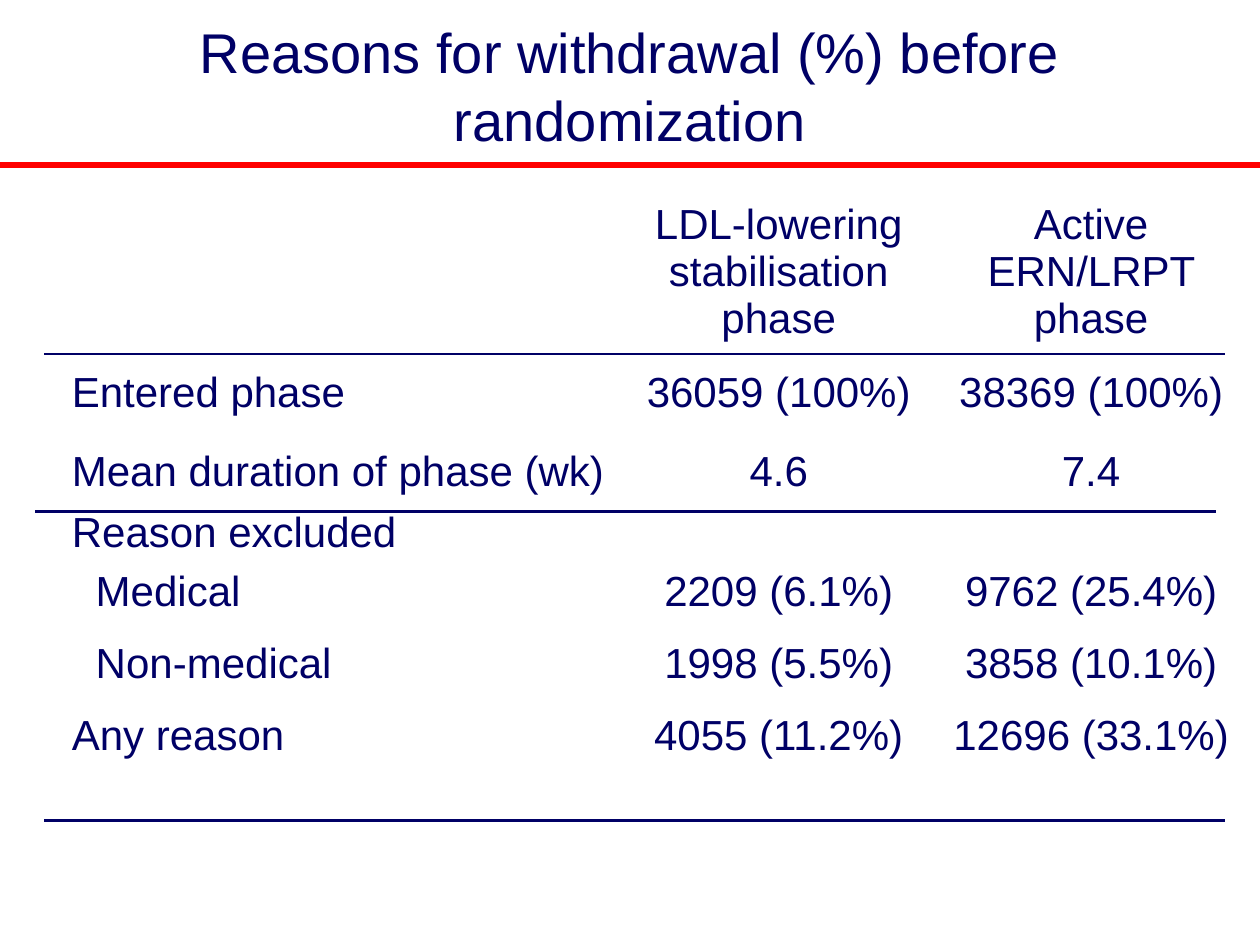
"""Build the slide on reasons for withdrawal before randomization."""
from dataclasses import dataclass

import pptx
import pptx.dml.color
import pptx.enum.shapes
import pptx.enum.text
import pptx.oxml.ns
import pptx.util
from lxml import etree
from pptx.util import Inches

NAVY = "000066"
RED = "FF0000"
ALIGN = pptx.enum.text.PP_ALIGN
ANCHOR = pptx.enum.text.MSO_ANCHOR


@dataclass
class Row:
    label: str
    stabilisation: str
    active: str
    height: float
    indent: float = 0


@dataclass
class Rule:
    left: float
    top: float
    length: float
    color: str = NAVY
    weight: float = 1.5


ROWS = [
    Row("", "LDL-lowering stabilisation phase", "Active ERN/LRPT phase", 1.33),
    Row("Entered phase", "36059 (100%)", "38369 (100%)", 0.63),
    Row("Mean duration of phase (wk)", "4.6", "7.4", 0.48),
    Row("Reason excluded", "", "", 0.47),
    Row("Medical", "2209 (6.1%)", "9762 (25.4%)", 0.57, 0.19),
    Row("Non-medical", "1998 (5.5%)", "3858 (10.1%)", 0.57, 0.19),
    Row("Any reason", "4055 (11.2%)", "12696 (33.1%)", 0.56),
]
COLUMN_WIDTHS = [4.45, 2.52, 2.44]
RULES = [
    Rule(0, 1.31, 10, RED, 3),
    Rule(0.35, 6.51, 9.37),
    Rule(0.28, 4.06, 9.37),
    Rule(0.35, 2.81, 9.37),
]


def rgb(color: str) -> pptx.dml.color.RGBColor:
    """Turn a hex string into a colour."""
    return pptx.dml.color.RGBColor.from_string(color)


def write(frame, text: str, size: float, alignment) -> None:
    """Write one styled run into the first paragraph of a frame."""
    para = frame.paragraphs[0]
    para.alignment = alignment
    span = para.add_run()
    span.text = text
    span.font.name = "Arial"
    span.font.size = pptx.util.Pt(size)
    span.font.color.rgb = rgb(NAVY)


def add_title(slide, text: str) -> None:
    """Place and fill the title placeholder."""
    title = slide.shapes.title
    title.left, title.top = Inches(0.5), Inches(0.05)
    title.width, title.height = Inches(9), Inches(1.25)
    frame = title.text_frame
    frame.word_wrap = True
    frame.auto_size = pptx.enum.text.MSO_AUTO_SIZE.NONE
    frame.vertical_anchor = ANCHOR.MIDDLE
    write(frame, text, 32, ALIGN.CENTER)


def add_withdrawal_table(slide, rows: list[Row]) -> None:
    """Draw the unfilled table of withdrawal counts."""
    table = slide.shapes.add_table(
        len(rows), len(COLUMN_WIDTHS), Inches(0.47), Inches(1.55),
        Inches(sum(COLUMN_WIDTHS)), Inches(sum(row.height for row in rows)),
    ).table
    table.first_row = False
    table.horz_banding = False
    for column, width in zip(table.columns, COLUMN_WIDTHS):
        column.width = Inches(width)
    for index, row in enumerate(rows):
        table.rows[index].height = Inches(row.height)
        for place, text in enumerate((row.label, row.stabilisation, row.active)):
            cell = table.cell(index, place)
            cell.fill.background()
            cell.vertical_anchor = ANCHOR.TOP
            if text:
                write(cell.text_frame, text, 24, ALIGN.CENTER if place else ALIGN.LEFT)
        table.cell(index, 0).margin_left = Inches(0.1 + row.indent)


def add_rule(slide, rule: Rule) -> None:
    """Draw a horizontal rule without a shadow."""
    line = slide.shapes.add_connector(
        pptx.enum.shapes.MSO_CONNECTOR.STRAIGHT,
        Inches(rule.left), Inches(rule.top),
        Inches(rule.left + rule.length), Inches(rule.top),
    )
    line.line.color.rgb = rgb(rule.color)
    line.line.width = pptx.util.Pt(rule.weight)
    etree.SubElement(line._element.spPr, pptx.oxml.ns.qn("a:effectLst"))


def main() -> None:
    """Assemble and save the deck."""
    deck = pptx.Presentation()
    deck.slide_width, deck.slide_height = Inches(10), Inches(7.5)
    slide = deck.slides.add_slide(deck.slide_layouts[5])
    add_title(slide, "Reasons for withdrawal (%) before randomization")
    add_withdrawal_table(slide, ROWS)
    for rule in RULES:
        add_rule(slide, rule)
    deck.save("out.pptx")


if __name__ == "__main__":
    main()
